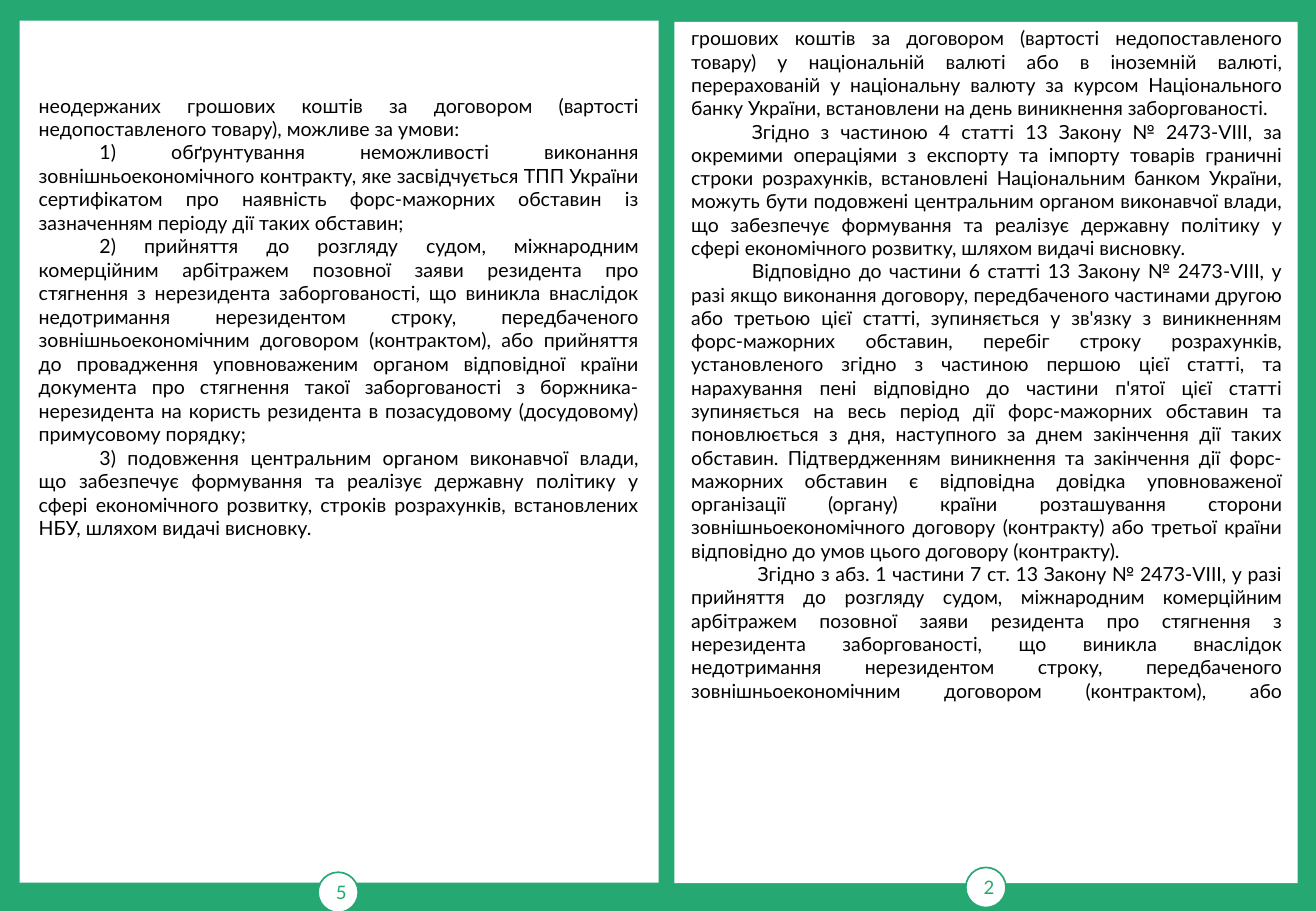
"""Build a two-page booklet spread on foreign trade settlement deadlines."""
from dataclasses import dataclass

from pptx import Presentation
from pptx.dml.color import RGBColor
from pptx.enum.shapes import MSO_SHAPE as Shape
from pptx.enum.text import MSO_ANCHOR as Anchor, PP_ALIGN as Align
from pptx.util import Cm, Pt

GREEN = RGBColor(0x25, 0xA8, 0x72)
WHITE = RGBColor(0xFF, 0xFF, 0xFF)
BLACK = RGBColor(0x00, 0x00, 0x00)
FONT = "Lato"
BADGE_SIZE = 0.84
INDENT = 1.27


@dataclass(frozen=True)
class Area:
    left: float
    top: float
    width: float
    height: float

    def lengths(self) -> tuple:
        return Cm(self.left), Cm(self.top), Cm(self.width), Cm(self.height)


@dataclass(frozen=True)
class Passage:
    text: str
    indent: float = INDENT
    runs_on: bool = False


@dataclass(frozen=True)
class Leaf:
    number: str
    sheet: Area
    badge: Area
    body: Area
    size: float
    passages: tuple


LEAVES = (
    Leaf(
        "5",
        Area(0.41, 0.43, 13.36, 18.03),
        Area(6.65, 18.24, BADGE_SIZE, BADGE_SIZE),
        Area(0.56, 1.83, 13.06, 9.5),
        11.6,
        (
            Passage(
                "неодержаних грошових коштів за договором (вартості "
                "недопоставленого товару), можливе за умови:",
                indent=0,
            ),
            Passage(
                "1) обґрунтування неможливості виконання "
                "зовнішньоекономічного контракту, яке засвідчується ТПП України "
                "сертифікатом про наявність форс-мажорних обставин із "
                "зазначенням періоду дії таких обставин;"
            ),
            Passage(
                "2) прийняття до розгляду судом, міжнародним "
                "комерційним арбітражем позовної заяви резидента про стягнення "
                "з нерезидента заборгованості, що виникла внаслідок "
                "недотримання нерезидентом строку, передбаченого "
                "зовнішньоекономічним договором (контрактом), або прийняття "
                "до провадження уповноваженим органом відповідної країни "
                "документа про стягнення такої заборгованості з "
                "боржника-нерезидента на користь резидента в позасудовому "
                "(досудовому) примусовому порядку;"
            ),
            Passage(
                "3) подовження центральним органом виконавчої влади, що "
                "забезпечує формування та реалізує державну політику у сфері "
                "економічного розвитку, строків розрахунків, встановлених НБУ, "
                "шляхом видачі висновку."
            ),
        ),
    ),
    Leaf(
        "2",
        Area(14.1, 0.46, 13.03, 18.01),
        Area(20.19, 18.14, BADGE_SIZE, BADGE_SIZE),
        Area(14.2, 0.43, 12.85, 18.44),
        11.5,
        (
            Passage(
                "грошових коштів за договором (вартості недопоставленого "
                "товару) у національній валюті або в іноземній валюті, "
                "перерахованій у національну валюту за курсом Національного "
                "банку України, встановлени на день виникнення заборгованості.",
                indent=0,
            ),
            Passage(
                "Згідно з частиною 4 статті 13 Закону № 2473-VIII, за "
                "окремими операціями з експорту та імпорту товарів граничні "
                "строки розрахунків, встановлені Національним банком України, "
                "можуть бути подовжені центральним органом виконавчої влади, "
                "що забезпечує формування та реалізує державну політику у "
                "сфері економічного розвитку, шляхом видачі висновку."
            ),
            Passage(
                "Відповідно до частини 6 статті 13 Закону № 2473-VIII, у "
                "разі якщо виконання договору, передбаченого частинами другою "
                "або третьою цієї статті, зупиняється у зв'язку з виникненням "
                "форс-мажорних обставин, перебіг строку розрахунків, "
                "установленого згідно з частиною першою цієї статті, та "
                "нарахування пені відповідно до частини п'ятої цієї статті "
                "зупиняється на весь період дії форс-мажорних обставин та "
                "поновлюється з дня, наступного за днем закінчення дії таких "
                "обставин. Підтвердженням виникнення та закінчення дії "
                "форс-мажорних обставин є відповідна довідка уповноваженої "
                "організації (органу) країни розташування сторони "
                "зовнішньоекономічного договору (контракту) або третьої країни "
                "відповідно до умов цього договору (контракту)."
            ),
            Passage(
                "Згідно з абз. 1 частини 7 ст. 13 Закону № 2473-VIII, у разі "
                "прийняття до розгляду судом, міжнародним комерційним "
                "арбітражем позовної заяви резидента про стягнення з "
                "нерезидента заборгованості, що виникла внаслідок "
                "недотримання нерезидентом строку, передбаченого "
                "зовнішньоекономічним договором (контрактом), або",
                indent=1.39,
                runs_on=True,
            ),
        ),
    ),
)


def write(para, text: str, *, size: float, color: RGBColor, align: Align,
          indent: float = 0, runs_on: bool = False) -> None:
    para.alignment = align
    if indent:
        para._p.get_or_add_pPr().set("indent", str(Cm(indent)))
    span = para.add_run()
    span.text = text
    span.font.name = FONT
    span.font.size = Pt(size)
    span.font.color.rgb = color
    if runs_on:
        para.add_line_break()


def add_panel(page, kind: Shape, area: Area, outlined: bool = False):
    panel = page.shapes.add_shape(kind, *area.lengths())
    panel.shadow.inherit = False
    panel.fill.solid()
    panel.fill.fore_color.rgb = WHITE
    if outlined:
        panel.line.color.rgb = GREEN
        panel.line.width = Pt(1)
    else:
        panel.line.fill.background()
    return panel


def add_sheet(page, leaf: Leaf) -> None:
    add_panel(page, Shape.RECTANGLE, leaf.sheet)
    badge = add_panel(page, Shape.OVAL, leaf.badge, outlined=True)
    badge.text_frame.vertical_anchor = Anchor.MIDDLE
    write(badge.text_frame.paragraphs[0], leaf.number,
          size=11, color=GREEN, align=Align.CENTER)


def add_body(page, leaf: Leaf) -> None:
    frame = page.shapes.add_textbox(*leaf.body.lengths()).text_frame
    frame.word_wrap = True
    for index, passage in enumerate(leaf.passages):
        para = frame.add_paragraph() if index else frame.paragraphs[0]
        write(para, passage.text, size=leaf.size, color=BLACK,
              align=Align.JUSTIFY, indent=passage.indent,
              runs_on=passage.runs_on)


def main() -> None:
    deck = Presentation()
    deck.slide_width, deck.slide_height = Cm(27.51), Cm(19.05)
    page = deck.slides.add_slide(deck.slide_layouts[6])
    page.background.fill.solid()
    page.background.fill.fore_color.rgb = GREEN
    for leaf in LEAVES:
        add_sheet(page, leaf)
        add_body(page, leaf)
    deck.save("out.pptx")


if __name__ == "__main__":
    main()
